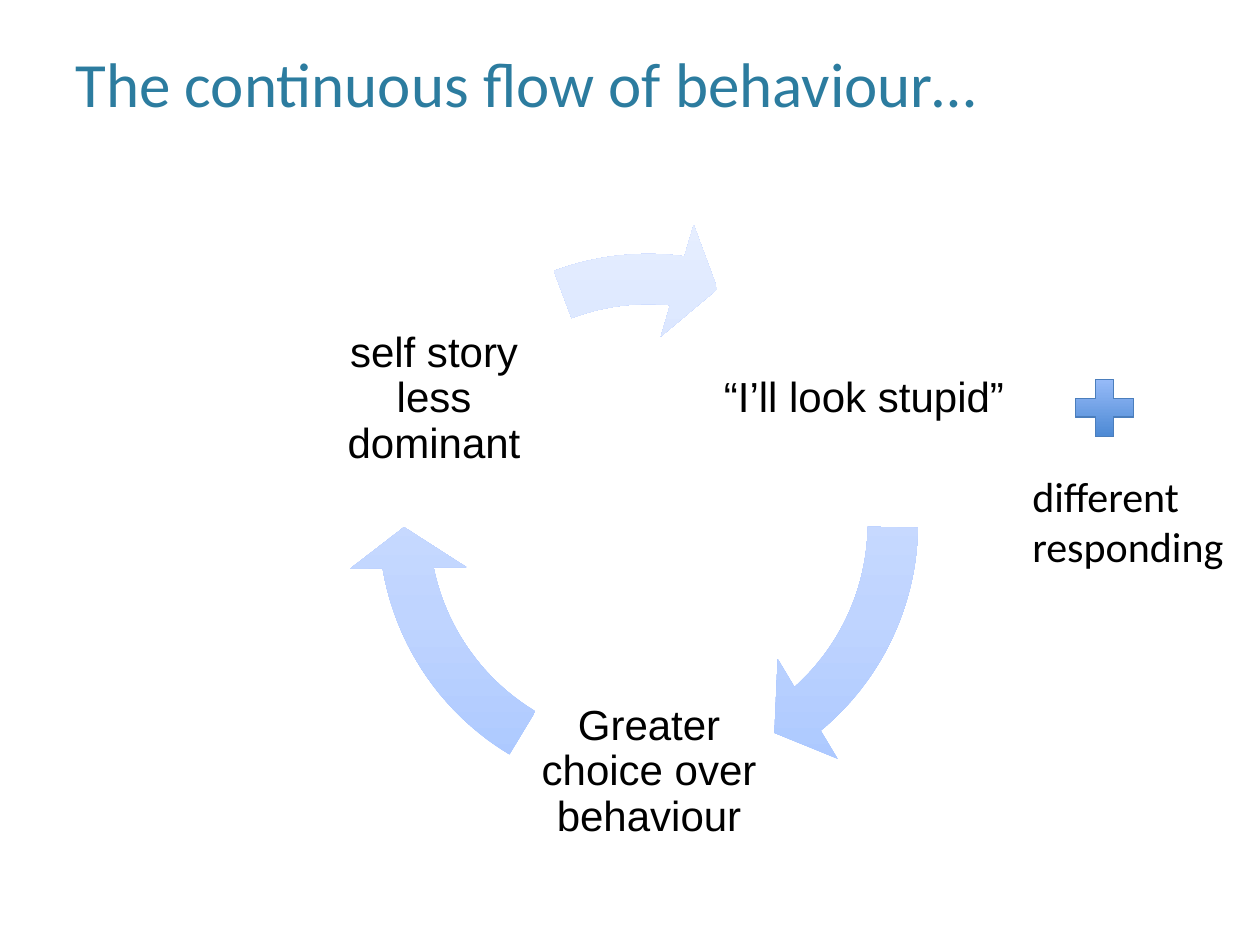
from lxml.etree import SubElement
from pptx import Presentation
from pptx.dml.color import RGBColor
from pptx.enum.shapes import MSO_SHAPE
from pptx.enum.text import MSO_ANCHOR, MSO_AUTO_SIZE, PP_ALIGN
from pptx.oxml.ns import qn
from pptx.util import Pt

PX = 914400 / 126  # EMU per pixel

CYCLE_STOPS = [(0, "A4C4FF"), (35, "BFD4FF"), (100, "E6EEFF")]
PLUS_STOPS = [(0, "3F80CD"), (100, "A4C4FF")]

# Label text, then its left, top, width, height inside the cycle
STAGES = [
    ("“I’ll look stupid”", (413, 50, 290, 256)),
    ("Greater choice over behaviour", (215, 423, 256, 256)),
    ("self story less dominant", (0, 50, 256, 256)),
]
# Arrowhead and tail angles of the arrow that leaves each stage
SWEEPS = [(29.62, 0.53), (101.71, 72.62), (166.07, 149.69)]


def emu(*lengths):
    return [round(length * PX) for length in lengths]


def color(value):
    return RGBColor.from_string(value)


def add_span(para, text, size, font, tint):
    span = para.add_run()
    span.text = text
    span.font.size = Pt(size)
    span.font.name = font
    span.font.color.rgb = color(tint)


def set_frame(frame, inset, anchor):
    frame.word_wrap = True
    frame.vertical_anchor = anchor
    frame.margin_left = frame.margin_right = inset
    frame.margin_top = frame.margin_bottom = inset


def fill_upward(shape, stops):
    """Gradient that runs from the bottom to the top of the shape."""
    shape.fill.gradient()
    shape.fill.gradient_angle = 90
    stop_list = shape._element.spPr.find(qn("a:gradFill")).find(qn("a:gsLst"))
    for stop in list(stop_list):
        stop_list.remove(stop)
    for position, tint in stops:
        stop = SubElement(stop_list, qn("a:gs"), pos=str(position * 1000))
        SubElement(stop, qn("a:srgbClr"), val=tint)


def add_title(page, left, top, width, height):
    title = page.shapes.title
    title.left, title.top, title.width, title.height = emu(left, top, width, height)
    frame = title.text_frame
    frame.vertical_anchor = MSO_ANCHOR.TOP
    frame.auto_size = MSO_AUTO_SIZE.NONE
    para = frame.paragraphs[0]
    para.alignment = PP_ALIGN.LEFT
    add_span(para, "The continuous flow of behaviour…", 36, "Calibri", "2C7C9F")


def add_cycle(page, left, top):
    group = page.shapes.add_group_shape()
    for (text, (x, y, width, height)), (head, tail) in zip(STAGES, SWEEPS):
        # Stage label
        box = group.shapes.add_textbox(*emu(left + x, top + y, width, height))
        set_frame(box.text_frame, Pt(2.4), MSO_ANCHOR.MIDDLE)
        para = box.text_frame.paragraphs[0]
        para.alignment = PP_ALIGN.CENTER
        para.line_spacing = 0.9
        add_span(para, text, 24, "Arial", "000000")

        # Arrow to the next stage, all on one ring
        arrow = group.shapes.add_shape(
            MSO_SHAPE.CIRCULAR_ARROW, *emu(left + 40, top, 605, 605))
        for index, value in enumerate((0.083, 5.765, head, tail, 0.096)):
            arrow.adjustments[index] = value
        arrow.shadow.inherit = False
        arrow.line.fill.background()
        fill_upward(arrow, CYCLE_STOPS)


def add_response(page, left, top):
    # Caption
    box = page.shapes.add_textbox(*emu(left, top + 95, 215, 115))
    frame = box.text_frame
    set_frame(frame, Pt(3.6), MSO_ANCHOR.TOP)
    for index, text in enumerate(("different", "responding")):
        para = frame.add_paragraph() if index else frame.paragraphs[0]
        add_span(para, text, 24, "Calibri", "000000")

    # Plus sign
    plus = page.shapes.add_shape(
        MSO_SHAPE.MATH_PLUS, *emu(left + 39, top, 79, 78))
    plus.shadow.inherit = False
    fill_upward(plus, PLUS_STOPS)
    plus.line.color.rgb = color("4B7EBC")
    plus.line.width = Pt(0.75)


def main():
    deck = Presentation()
    deck.slide_width, deck.slide_height = emu(1260, 945)
    page = deck.slides.add_slide(deck.slide_layouts[5])
    add_title(page, 63, 38, 1134, 157)
    add_cycle(page, 306, 221)
    add_response(page, 1026, 369)
    deck.save("out.pptx")


if __name__ == "__main__":
    main()
